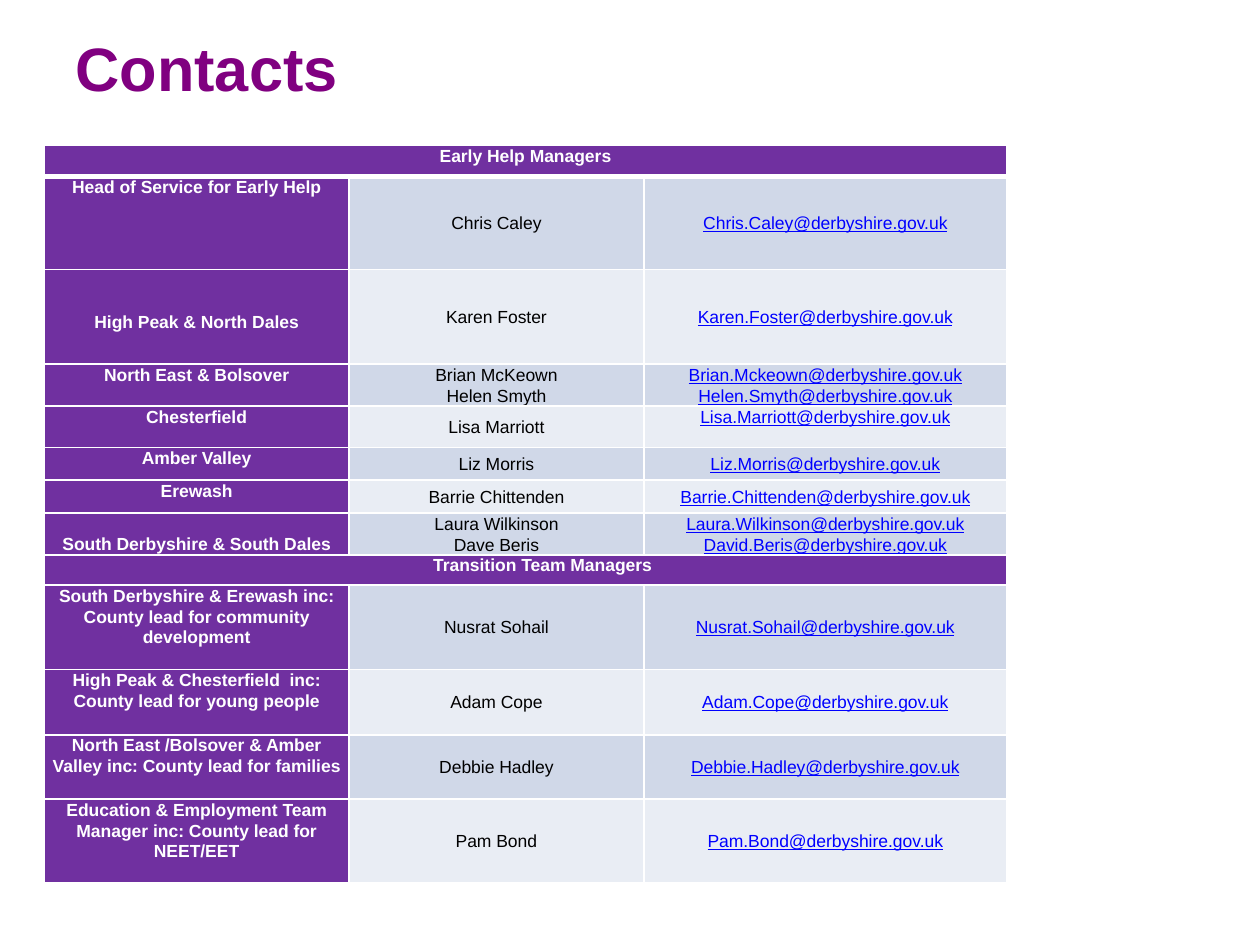
from dataclasses import dataclass

from lxml import etree
from pptx import Presentation, util as u
from pptx.dml.color import RGBColor
from pptx.enum import text
from pptx.oxml import ns

COLOURS = {"title": "800080", "head": "7030A0", "odd": "D0D8E8", "even": "E9EDF4",
           "white": "FFFFFF", "name": "000000", "email": "0000FF"}
FONT = "Arial"
COLUMNS = (2.42, 2.34, 2.88)
LEFT, TOP = 0.35, 1.15
SIDE = 0.04
LINE = 0.165
DOMAIN = "@derbyshire.gov.uk"
TOP_ANCHOR = text.MSO_ANCHOR.TOP
MIDDLE = text.MSO_ANCHOR.MIDDLE


@dataclass
class Contact:
    area: str
    names: str
    accounts: str
    height: float
    lines_down: int = 0
    email_anchor: text.MSO_ANCHOR = MIDDLE

    @property
    def emails(self) -> str:
        return "\n".join(a + DOMAIN for a in self.accounts.split("\n"))


@dataclass
class Section:
    heading: str
    height: float
    rule: float
    indent: float
    contacts: list[Contact]


SECTIONS = [
    Section("Early Help Managers", 0.25, 3, 0, [
        Contact("Head of Service for Early Help", "Chris Caley", "Chris.Caley", 0.74),
        Contact("High Peak & North Dales", "Karen Foster", "Karen.Foster", 0.75, lines_down=2),
        Contact("North East & Bolsover", "Brian McKeown\nHelen Smyth",
                "Brian.Mckeown\nHelen.Smyth", 0.33),
        Contact("Chesterfield", "Lisa Marriott", "Lisa.Marriott", 0.33,
                email_anchor=TOP_ANCHOR),
        Contact("Amber Valley", "Liz Morris", "Liz.Morris", 0.26),
        Contact("Erewash", "Barrie Chittenden", "Barrie.Chittenden", 0.26),
        Contact("South Derbyshire & South Dales", "Laura Wilkinson\nDave Beris",
                "Laura.Wilkinson\nDavid.Beris", 0.33, lines_down=1),
    ]),
    Section("Transition Team Managers", 0.24, 1, 0.27, [
        Contact("South Derbyshire & Erewash inc: County lead for community development",
                "Nusrat Sohail", "Nusrat.Sohail", 0.67),
        Contact("High Peak & Chesterfield  inc: County lead for young people",
                "Adam Cope", "Adam.Cope", 0.52),
        Contact("North East /Bolsover & Amber Valley inc: County lead for families",
                "Debbie Hadley", "Debbie.Hadley", 0.51),
        Contact("Education & Employment Team Manager inc: County lead for NEET/EET",
                "Pam Bond", "Pam.Bond", 0.66),
    ]),
]


def rgb(name: str) -> RGBColor:
    return RGBColor.from_string(COLOURS[name])


def set_borders(cell, top: float = 1, bottom: float = 1) -> None:
    """Draw white rules, in points, around a cell."""
    tc_pr = cell._tc.get_or_add_tcPr()
    widths = {"lnL": 1, "lnR": 1, "lnT": top, "lnB": bottom}
    for i, (tag, width) in enumerate(widths.items()):
        ln = etree.Element(ns.qn(f"a:{tag}"), w=str(u.Pt(width)))
        fill = etree.SubElement(ln, ns.qn("a:solidFill"))
        etree.SubElement(fill, ns.qn("a:srgbClr"), val=COLOURS["white"])
        tc_pr.insert(i, ln)


def fill_cell(cell, content: str, fill: str, colour: str, bold: bool = False,
              underline: bool = False, anchor: text.MSO_ANCHOR = TOP_ANCHOR,
              indent: float = 0, drop: float = 0) -> None:
    cell.fill.solid()
    cell.fill.fore_color.rgb = rgb(fill)
    cell.vertical_anchor = anchor
    cell.margin_left, cell.margin_right = u.Inches(SIDE + indent), u.Inches(SIDE)
    cell.margin_top, cell.margin_bottom = u.Inches(drop), 0
    cell.text_frame.text = content
    for p in cell.text_frame.paragraphs:
        p.alignment = text.PP_ALIGN.CENTER
        p.line_spacing = 1.07
        p.font.name, p.font.size = FONT, u.Pt(10)
        p.font.bold, p.font.underline = bold, underline
        p.font.color.rgb = rgb(colour)


def add_title(s) -> None:
    title = s.shapes.title
    title.left, title.top = u.Inches(0.5), u.Inches(0.16)
    title.width, title.height = u.Inches(5.52), u.Inches(0.75)
    title.text_frame.text = "Contacts"
    title.text_frame.vertical_anchor = MIDDLE
    p = title.text_frame.paragraphs[0]
    p.alignment = text.PP_ALIGN.LEFT
    p.font.name, p.font.size, p.font.bold = FONT, u.Pt(35), True
    p.font.color.rgb = rgb("title")


def add_contacts(s, sections: list[Section]) -> None:
    heights = [row.height for sec in sections for row in (sec, *sec.contacts)]
    table = s.shapes.add_table(len(heights), len(COLUMNS), u.Inches(LEFT), u.Inches(TOP),
                               u.Inches(sum(COLUMNS)), u.Inches(sum(heights))).table
    table.first_row = table.horz_banding = False
    for column, width in zip(table.columns, COLUMNS):
        column.width = u.Inches(width)
    for row, height in zip(table.rows, heights):
        row.height = u.Inches(height)

    rows = iter(table.rows)
    for sec in sections:
        cells = list(next(rows).cells)
        cells[0].merge(cells[-1])
        fill_cell(cells[0], sec.heading, "head", "white", bold=True, indent=sec.indent)
        for cell in cells:
            set_borders(cell, bottom=sec.rule)
        for i, contact in enumerate(sec.contacts):
            area, name, email = cells = list(next(rows).cells)
            band = "even" if i % 2 else "odd"
            fill_cell(area, contact.area, "head", "white", bold=True,
                      drop=contact.lines_down * LINE)
            fill_cell(name, contact.names, band, "name", anchor=MIDDLE)
            fill_cell(email, contact.emails, band, "email", underline=True,
                      anchor=contact.email_anchor)
            for cell in cells:
                set_borders(cell, top=1 if i else sec.rule)


def main() -> None:
    prs = Presentation()
    prs.slide_width, prs.slide_height = u.Inches(10), u.Inches(7.5)
    s = prs.slides.add_slide(prs.slide_layouts[5])
    add_contacts(s, SECTIONS)
    add_title(s)
    prs.save("out.pptx")


if __name__ == "__main__":
    main()
